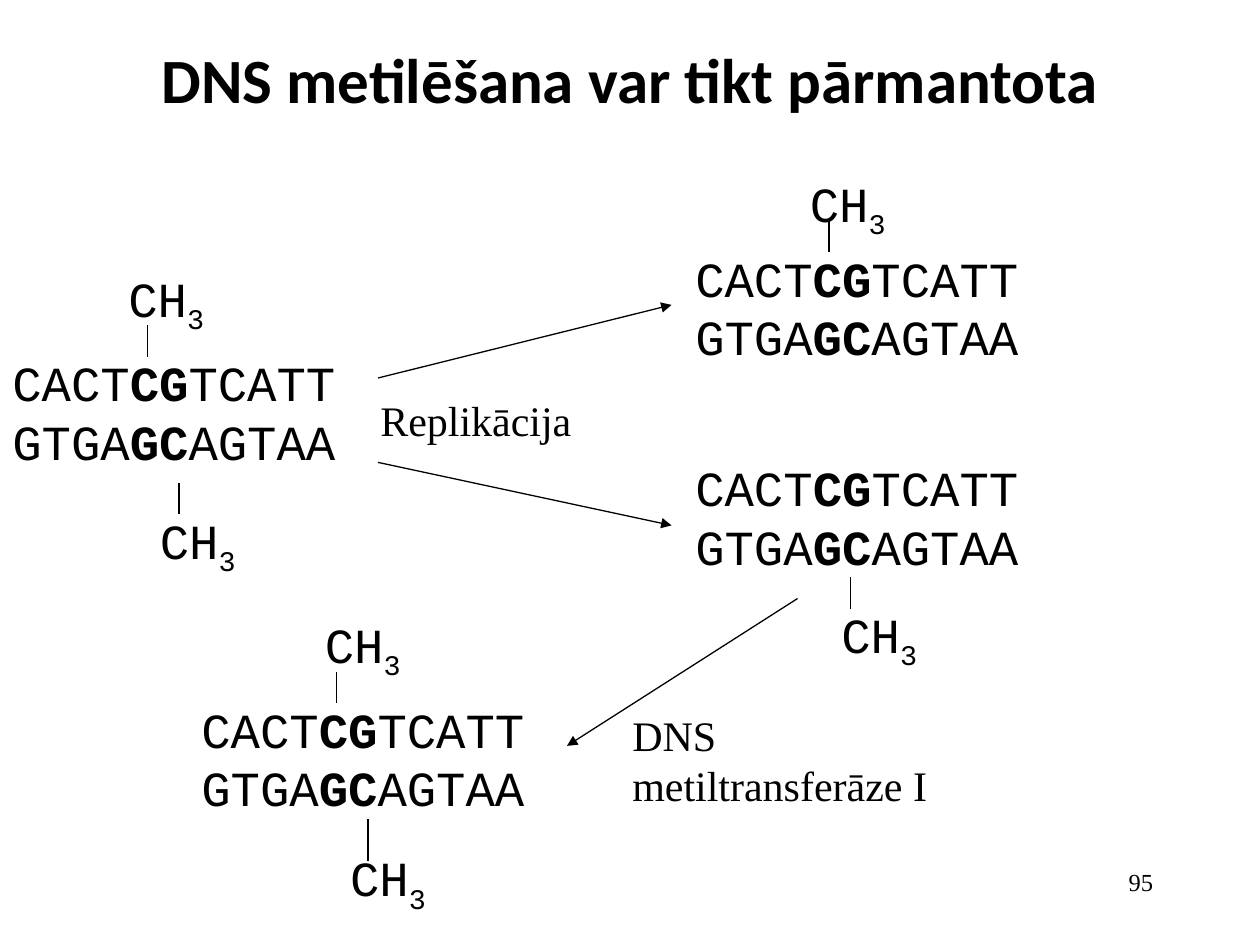
from typing import NamedTuple

from lxml import etree
from pptx import Presentation
from pptx.dml.color import RGBColor
from pptx.enum.shapes import MSO_CONNECTOR
from pptx.enum.text import MSO_ANCHOR, PP_ALIGN
from pptx.oxml.ns import qn
from pptx.util import Inches, Pt

LINE = MSO_CONNECTOR.STRAIGHT
LEFT, MID, RIGHT = PP_ALIGN.LEFT, PP_ALIGN.CENTER, PP_ALIGN.RIGHT
TOP, CENTRE = MSO_ANCHOR.TOP, MSO_ANCHOR.MIDDLE
BLACK = "000000"
MONO, SERIF, SANS = "Courier New", "Times New Roman", "Calibri"
STRAND = (("CACT", False), ("CG", True), ("TCATTGTGA", False),
          ("GC", True), ("AGTAA", False))


class Box(NamedTuple):
    left: float
    top: float
    width: float
    height: float


class Label(NamedTuple):
    text: str
    box: Box
    size: int
    font: str
    align: PP_ALIGN = LEFT
    anchor: MSO_ANCHOR = TOP
    bold: bool = False


class Bond(NamedTuple):
    left: float
    top: float
    x: float
    start: float
    end: float


class Arrow(NamedTuple):
    x1: float
    y1: float
    x2: float
    y2: float


LABELS = (
    Label("DNS metilēšana var tikt pārmantota", Box(0, 0, 10, 1.25),
          36, SANS, MID, CENTRE, True),
    Label("Replikācija", Box(2.92, 3.08, 1.83, 0.5), 24, SERIF),
    Label("DNS metiltransferāze I", Box(4.92, 5.58, 2.83, 0.91), 24, SERIF),
    Label("95", Box(7.17, 6.83, 2.08, 0.5), 14, SERIF, RIGHT),
)
STRANDS = (
    Box(0, 2.75, 2.83, 1.17),
    Box(5.42, 1.92, 2.96, 1.17),
    Box(5.42, 3.58, 2.92, 1.17),
    Box(1.5, 5.5, 2.84, 1.17),
)
BONDS = (
    Bond(0.92, 2.08, 1.17, 2.58, 2.83),
    Bond(1.17, 4, 1.42, 3.83, 4.08),
    Bond(6.33, 1.33, 6.58, 1.75, 2),
    Bond(6.58, 4.75, 6.75, 4.58, 4.83),
    Bond(2.48, 4.83, 2.67, 5.33, 5.58),
    Bond(2.68, 6.68, 2.92, 6.5, 6.83),
)
ARROWS = (
    Arrow(3, 3, 5.33, 2.42),
    Arrow(3, 3.67, 5.33, 4.17),
    Arrow(6.33, 4.75, 4.5, 5.92),
)


def paint(fill, code: str) -> None:
    fill.solid()
    fill.fore_color.rgb = RGBColor.from_string(code)


def add_text(slide, box: Box, size: int, font: str, anchor=TOP):
    frame = slide.shapes.add_textbox(*map(Inches, box)).text_frame
    frame.word_wrap = True
    frame.vertical_anchor = anchor
    para = frame.paragraphs[0]
    para.font.size = Pt(size)
    para.font.name = font
    paint(para.font.fill, BLACK)
    return para


def add_run(para, text: str):
    run = para.add_run()
    run.text = text
    return run


def add_label(slide, label: Label) -> None:
    para = add_text(slide, label.box, label.size, label.font, label.anchor)
    para.alignment = label.align
    para.font.bold = label.bold
    add_run(para, label.text)


def add_strand(slide, box: Box) -> None:
    para = add_text(slide, box, 28, MONO)
    for text, bold in STRAND:
        add_run(para, text).font.bold = bold


def add_line(slide, ends: Arrow, head: bool = False) -> None:
    line = slide.shapes.add_connector(LINE, *map(Inches, ends))
    line.line.width = Pt(0.75)
    paint(line.line.fill, BLACK)
    props = line._element.spPr
    if head:
        tail = etree.SubElement(props.find(qn("a:ln")), qn("a:tailEnd"))
        tail.set("type", "triangle")
    etree.SubElement(props, qn("a:effectLst"))


def add_methyl(slide, bond: Bond) -> None:
    para = add_text(slide, Box(bond.left, bond.top, 1.17, 0.57), 28, MONO)
    add_run(para, "CH")
    sub = add_run(para, "3")
    sub.font._element.set("baseline", "-25000")
    add_line(slide, Arrow(bond.x, bond.start, bond.x, bond.end))


def main() -> None:
    deck = Presentation()
    deck.slide_width, deck.slide_height = Inches(10), Inches(7.5)
    slide = deck.slides.add_slide(deck.slide_layouts[6])
    for label in LABELS:
        add_label(slide, label)
    for box in STRANDS:
        add_strand(slide, box)
    for arrow in ARROWS:
        add_line(slide, arrow, head=True)
    for bond in BONDS:
        add_methyl(slide, bond)
    deck.save("out.pptx")


if __name__ == "__main__":
    main()
